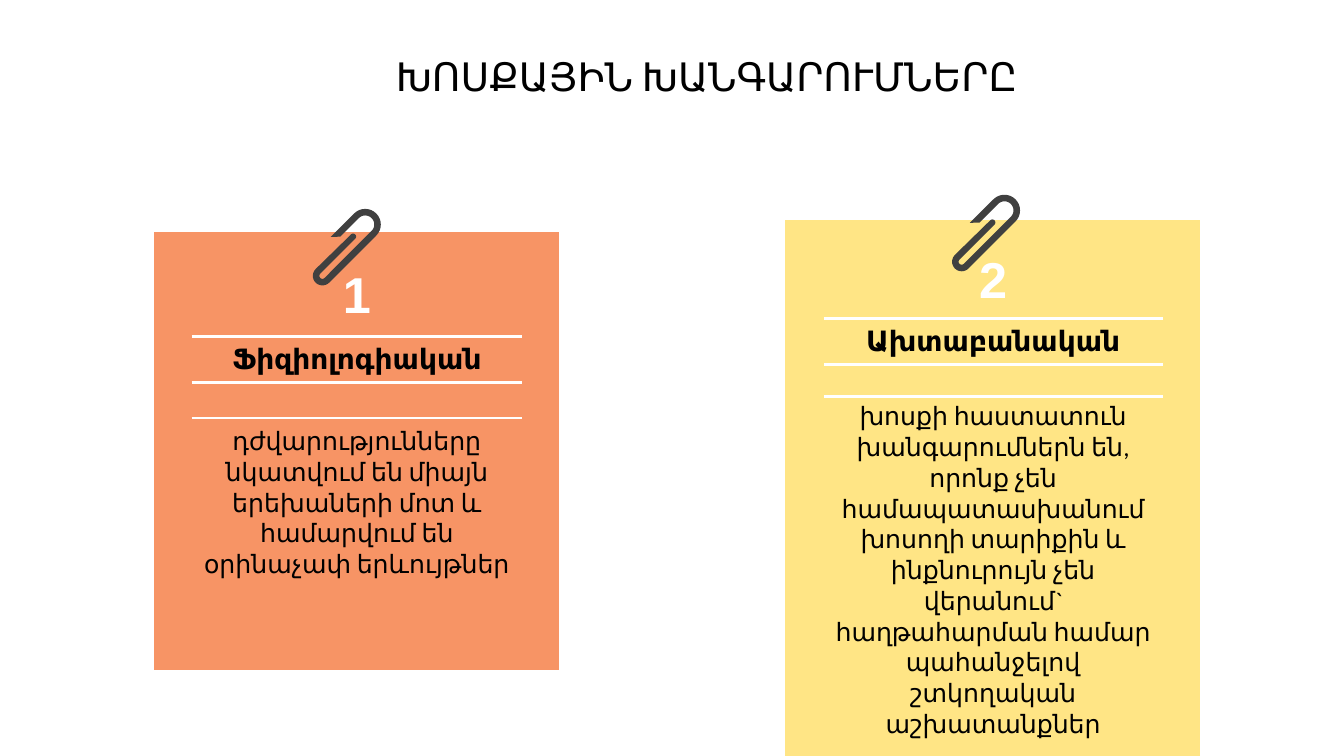
from dataclasses import dataclass
from math import cos, radians, sin

from lxml.etree import SubElement
from pptx import Presentation
from pptx.dml.color import RGBColor
from pptx.enum.text import MSO_ANCHOR, PP_ALIGN
from pptx.oxml import parse_xml
from pptx.oxml.ns import nsdecls, qn
from pptx.slide import Slide
from pptx.table import _Cell
from pptx.text.text import _Paragraph
from pptx.util import Inches, Pt

BLACK = RGBColor(0x00, 0x00, 0x00)
WHITE = RGBColor(0xFF, 0xFF, 0xFF)
ORANGE = RGBColor(0xF7, 0x94, 0x65)
YELLOW = RGBColor(0xFF, 0xE5, 0x85)
CLIP_GREY = RGBColor(0x40, 0x40, 0x40)

PLAIN_TABLE_STYLE = "{2D5ABB26-0587-4C30-8999-92F81FD0307C}"
RULE_WIDTH = Pt(2.25)

TITLE_FONT = {"size": Pt(28), "name": "Calibri"}
NUMBER_FONT = {"size": Pt(36), "name": "Arial", "bold": True}
HEADING_FONT = {"size": Pt(20), "name": "Calibri", "bold": True}
BODY_FONT = {"size": Pt(18), "name": "Calibri", "bold": False}

# Table rows that hold text or touch a white rule
NUMBER_ROW, HEADING_ROW, GAP_ROW, BODY_ROW = 1, 2, 3, 4
RULED_SIDES = {NUMBER_ROW: "B", HEADING_ROW: "TB", GAP_ROW: "T"}


@dataclass
class Note:
    number: str
    heading: str
    body: str
    color: RGBColor
    left: float
    top: float
    columns: list[float]
    rows: list[float]
    clip_center: tuple[float, float]


@dataclass
class Arc:
    x: float
    y: float
    radius: float
    start: int
    end: int

    def points(self, steps: int = 16) -> list[tuple[float, float]]:
        angles = [radians(self.start + (self.end - self.start) * i / steps)
                  for i in range(steps + 1)]
        return [(self.x + self.radius * cos(a), self.y + self.radius * sin(a))
                for a in angles]


NOTES = [
    Note("2", "Ախտաբանական",
         "խոսքի հաստատուն խանգարումներն են, որոնք չեն համապատասխանում "
         "խոսողի տարիքին և ինքնուրույն չեն վերանում` հաղթահարման համար "
         "պահանջելով շտկողական աշխատանքներ",
         YELLOW, 7.79, 2.18, [0.38, 3.36, 0.37],
         [0.23, 0.75, 0.43, 0.32, 2.63], (9.75, 2.3)),
    Note("1", "Ֆիզիոլոգիական",
         "դժվարությունները նկատվում են միայն երեխաների մոտ և "
         "համարվում են օրինաչափ երևույթներ",
         ORANGE, 1.53, 2.3, [0.37, 3.28, 0.36],
         [0.24, 0.8, 0.45, 0.35, 1.88, 0.31, 0.31], (3.41, 2.44)),
]

# Bends of an upright paper clip, relative to its center
CLIP_BENDS = [
    Arc(0, -0.3, 0.155, 180, 360),
    Arc(0.06, 0.36, 0.095, 0, 180),
    Arc(0, -0.13, 0.03, 180, 360),
    Arc(0.06, 0.36, 0.03, 180, 0),
    Arc(0, -0.3, 0.09, 360, 180),
]
CLIP_END = [(-0.09, -0.04), (-0.155, 0.03)]


def write(paragraph: _Paragraph, text: str, color: RGBColor, font: dict) -> None:
    paragraph.alignment = PP_ALIGN.CENTER
    run = paragraph.add_run()
    run.text = text
    run.font.color.rgb = color
    for attribute, value in font.items():
        setattr(run.font, attribute, value)


def shrink_empty(cell: _Cell) -> None:
    for side in ("top", "bottom"):
        setattr(cell, f"margin_{side}", 0)
    SubElement(cell.text_frame.paragraphs[0]._p, qn("a:endParaRPr"), sz="800")


def add_rules(cell: _Cell, sides: str) -> None:
    properties = cell._tc.get_or_add_tcPr()
    for position, side in enumerate(sides):
        properties.insert(position, parse_xml(
            f'<a:ln{side} {nsdecls("a")} w="{RULE_WIDTH}"><a:solidFill>'
            f'<a:srgbClr val="{WHITE}"/></a:solidFill></a:ln{side}>'))


def add_title(slide: Slide, text: str) -> None:
    frame = slide.shapes.add_textbox(
        Inches(0.68), Inches(0.52), Inches(12.66), Inches(0.79)).text_frame
    frame.word_wrap = True
    paragraph = frame.paragraphs[0]
    paragraph.line_spacing = 0.9
    paragraph.space_before = Pt(10)
    write(paragraph, text, BLACK, TITLE_FONT)


def add_note(slide: Slide, note: Note) -> None:
    frame = slide.shapes.add_table(
        len(note.rows), len(note.columns), Inches(note.left), Inches(note.top),
        Inches(sum(note.columns)), Inches(sum(note.rows)))
    table = frame.table
    table.first_row = table.horz_banding = False
    table._tbl.tblPr.find(qn("a:tableStyleId")).text = PLAIN_TABLE_STYLE
    for column, width in zip(table.columns, note.columns):
        column.width = Inches(width)

    texts = {
        NUMBER_ROW: (note.number, WHITE, NUMBER_FONT),
        HEADING_ROW: (note.heading, BLACK, HEADING_FONT),
        BODY_ROW: (note.body, BLACK, BODY_FONT),
    }
    for index, (row, height) in enumerate(zip(table.rows, note.rows)):
        row.height = Inches(height)
        for column, cell in enumerate(row.cells):
            cell.fill.solid()
            cell.fill.fore_color.rgb = note.color
            cell.vertical_anchor = MSO_ANCHOR.MIDDLE
            if column == 1 and index in texts:
                write(cell.text_frame.paragraphs[0], *texts[index])
            else:
                shrink_empty(cell)
        add_rules(table.cell(index, 1), RULED_SIDES.get(index, ""))
    heading = table.cell(HEADING_ROW, 1).text_frame.paragraphs[0]
    heading.line_spacing = Pt(25.6)
    table.cell(BODY_ROW, 1).margin_bottom = Inches(0.23)


def add_clip(slide: Slide, center: tuple[float, float]) -> None:
    outline = [point for bend in CLIP_BENDS for point in bend.points()] + CLIP_END
    corners = [(Inches(center[0] + x), Inches(center[1] + y)) for x, y in outline]
    builder = slide.shapes.build_freeform(*corners[0])
    builder.add_line_segments(corners[1:], close=True)
    clip = builder.convert_to_shape()
    clip.rotation = 45
    clip.shadow.inherit = False
    clip.fill.solid()
    clip.fill.fore_color.rgb = CLIP_GREY
    clip.line.fill.background()


def main() -> None:
    presentation = Presentation()
    presentation.slide_width = Inches(13.33)
    presentation.slide_height = Inches(7.5)
    slide = presentation.slides.add_slide(presentation.slide_layouts[6])

    add_title(slide, "ԽՈՍՔԱՅԻՆ ԽԱՆԳԱՐՈՒՄՆԵՐԸ")
    for note in NOTES:
        add_note(slide, note)
        add_clip(slide, note.clip_center)
    presentation.save("out.pptx")


if __name__ == "__main__":
    main()
